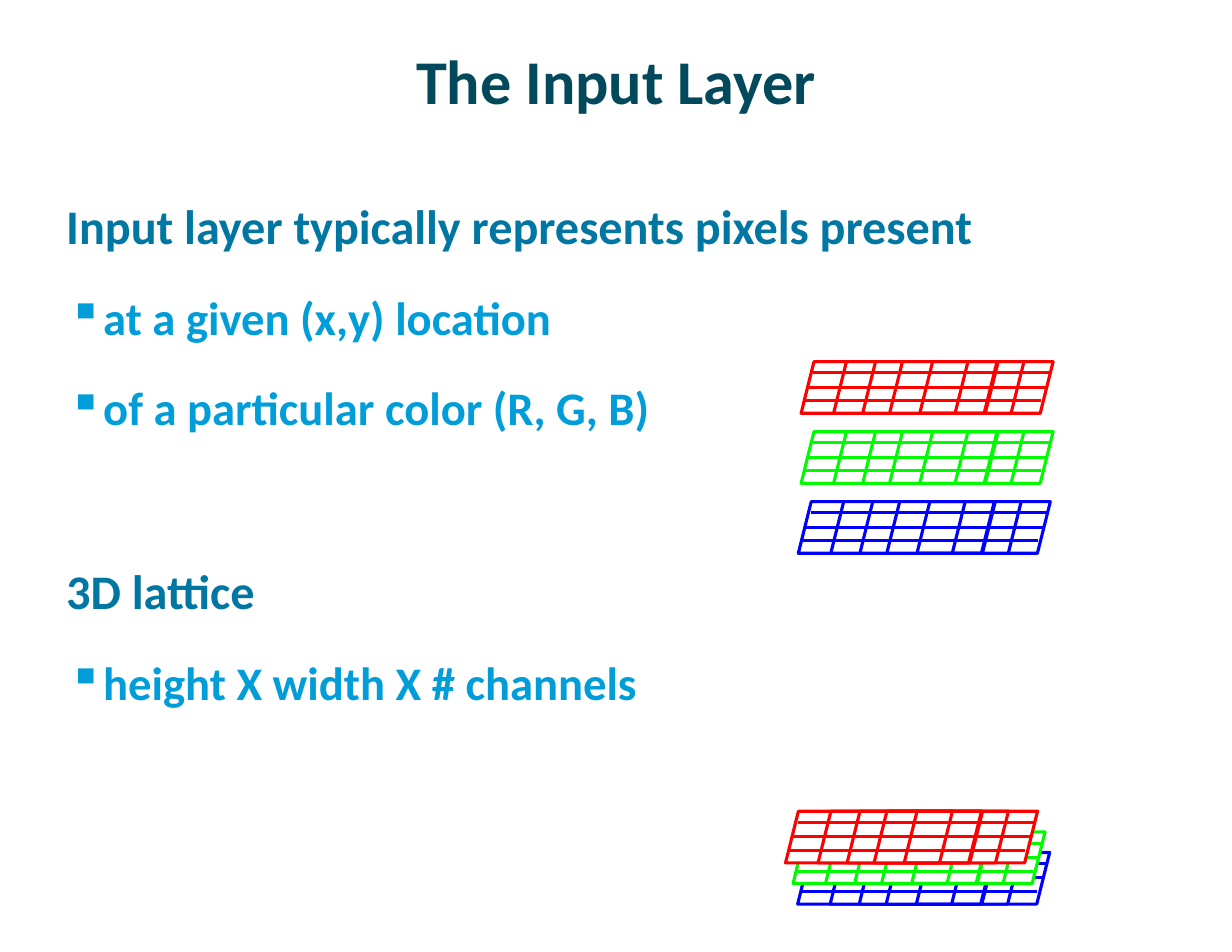
from lxml.etree import SubElement
from pptx import Presentation
from pptx.dml.color import RGBColor
from pptx.enum.shapes import MSO_CONNECTOR, MSO_SHAPE
from pptx.enum.text import MSO_ANCHOR, PP_ALIGN
from pptx.oxml.ns import qn
from pptx.util import Pt

# Content
TITLE = "The Input Layer"
# text, is bullet, space before
BODY = [
    ("Input layer typically represents pixels present", False, 22.1),
    ("at a given (x,y) location", True, 22.1),
    ("of a particular color (R, G, B)", True, 22.1),
    ("3D lattice", False, 81),
    ("height X width X # channels", True, 22.1),
]
RED, GREEN, BLUE = "FF0000", "00FA00", "0000FF"
# left, top, colour of each channel, back to front
CHANNELS = [
    (515, 232.5, RED), (515, 277.5, GREEN), (513.2, 322.5, BLUE),
    (512.8, 548, BLUE), (509.8, 534.8, GREEN), (505, 521.5, RED),
]

# One channel: nested cells (left, width, filled) and row lines (left, top)
CELLS = [(0, 162, True), (59, 48, True), (20.9, 122.4, True),
         (39.6, 86.4, True), (56.9, 50.4, True), (76.3, 50.4, False)]
ROWS = [(7.9, 7.2), (5, 16.4), (1.6, 25.2)]
CHANNEL_HEIGHT = 33.2
ROW_LENGTH = 152.4
LINE_WIDTH = 2


def rgb(value):
    return RGBColor.from_string(value)


def add_text_frame(left, top, width, height):
    frame = slide.shapes.add_textbox(Pt(left), Pt(top), Pt(width), Pt(height)).text_frame
    frame.word_wrap = True
    frame.margin_left = frame.margin_right = Pt(8)
    frame.margin_top = frame.margin_bottom = Pt(4)
    return frame


def write(paragraph, text, size, color):
    paragraph.text = text
    font = paragraph.runs[0].font
    font.name, font.size, font.bold = "Calibri", Pt(size), True
    font.color.rgb = rgb(color)


def set_line(part, color):
    part.line.color.rgb = rgb(color)
    part.line.width = Pt(LINE_WIDTH)


def add_channel(left, top, color):
    group = slide.shapes.add_group_shape().shapes
    for dx, width, filled in CELLS:
        cell = group.add_shape(MSO_SHAPE.PARALLELOGRAM, Pt(left + dx), Pt(top),
                               Pt(width), Pt(CHANNEL_HEIGHT))
        cell.shadow.inherit = False
        if filled:
            cell.fill.solid()
            cell.fill.fore_color.rgb = rgb("FFFFFF")
        else:
            cell.fill.background()
        set_line(cell, color)
    for dx, dy in ROWS:
        row = group.add_connector(MSO_CONNECTOR.STRAIGHT, Pt(left + dx), Pt(top + dy),
                                  Pt(left + dx + ROW_LENGTH), Pt(top + dy))
        set_line(row, color)
        SubElement(row._element.spPr, qn("a:effectLst"))


prs = Presentation()
prs.slide_width, prs.slide_height = Pt(792), Pt(612)
slide = prs.slides.add_slide(prs.slide_layouts[6])

# Title
title = add_text_frame(39.6, 13.7, 712.8, 74.9)
title.vertical_anchor = MSO_ANCHOR.MIDDLE
write(title.paragraphs[0], TITLE, 40, "03495C")
title.paragraphs[0].alignment = PP_ALIGN.CENTER

# Body
body = add_text_frame(26.6, 122.4, 725.8, 424)
for index, (text, is_bullet, space) in enumerate(BODY):
    paragraph = body.paragraphs[0] if index == 0 else body.add_paragraph()
    paragraph.space_before = Pt(space)
    props = paragraph._p.get_or_add_pPr()
    if is_bullet:
        write(paragraph, text, 30, "009DD9")
        paragraph.level = 1
        props.set("marL", str(Pt(31.7)))
        props.set("indent", str(Pt(-22.3)))
        SubElement(props, qn("a:buChar"), char="▪")
    else:
        write(paragraph, text, 31, "0076A3")
        props.set("marL", str(Pt(8)))
        props.set("indent", "0")

# Colour channels, spread out and stacked
for left, top, color in CHANNELS:
    add_channel(left, top, color)

prs.save("out.pptx")
